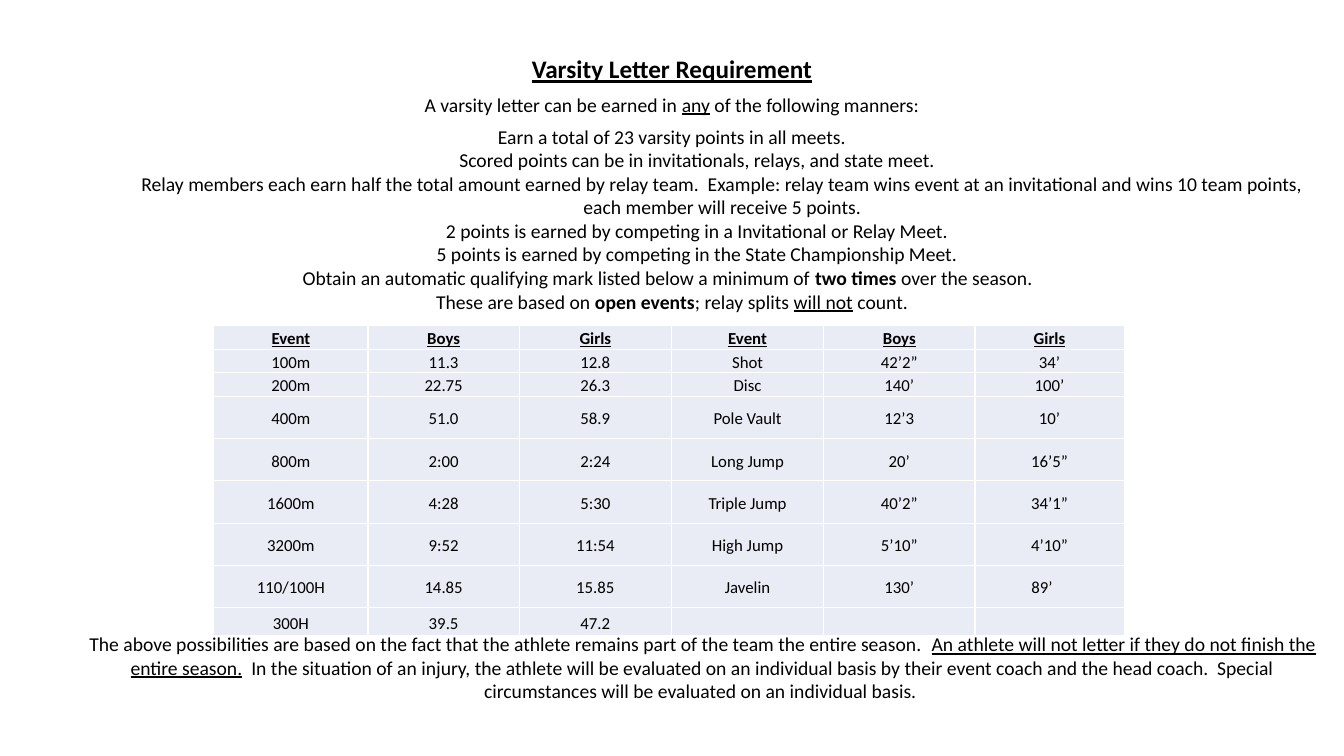
from lxml import etree
from pptx import Presentation
from pptx.dml.color import RGBColor
from pptx.enum.text import MSO_ANCHOR, MSO_AUTO_SIZE, PP_ALIGN
from pptx.oxml.ns import qn
from pptx.util import Pt

PX = 9144  # 100 px to the inch
FONT = "Calibri"
BLACK = RGBColor(0x00, 0x00, 0x00)
WHITE = RGBColor(0xFF, 0xFF, 0xFF)
CELL_FILL = RGBColor(0xE9, 0xEB, 0xF5)
LEFT, CENTER = PP_ALIGN.LEFT, PP_ALIGN.CENTER
TOP, MIDDLE = MSO_ANCHOR.TOP, MSO_ANCHOR.MIDDLE
NO_FIT = MSO_AUTO_SIZE.NONE

# Each paragraph: level, space after, then runs of (text, style)
RULES = [
    (0, 6, [("A varsity letter can be earned in ", ""), ("any", "u"),
            (" of the following manners:", "")]),
    (0, 0, [("Earn a total of 23 varsity points in all meets.", "")]),
    (1, 0, [("Scored points can be in invitationals, relays, and state meet.", "")]),
    (2, 0, [("Relay members each earn half the total amount earned by relay team.  "
             "Example: relay team wins event at an invitational and wins 10 team "
             "points, each member will receive 5 points.", "")]),
    (1, 0, [("2 points is earned by competing in a Invitational or Relay Meet.", "")]),
    (1, 0, [("5 points is earned by competing in the State Championship Meet.", "")]),
    (0, 0, [("Obtain an automatic qualifying mark listed below a minimum of ", ""),
            ("two times", "b"), (" over the season.  ", "")]),
    (0, 0, [("These are based on ", ""), ("open events", "b"),
            ("; relay splits ", ""), ("will not", "u"), (" count.", "")]),
]
MARKS = [
    ["Event", "Boys", "Girls", "Event", "Boys", "Girls"],
    ["100m", "11.3", "12.8", "Shot", "42’2”", "34’"],
    ["200m", "22.75", "26.3", "Disc", "140’", "100’"],
    ["400m", "51.0", "58.9", "Pole Vault", "12’3", "10’"],
    ["800m", "2:00", "2:24", "Long Jump", "20’", "16’5”"],
    ["1600m", "4:28", "5:30", "Triple Jump", "40’2”", "34’1”"],
    ["3200m", "9:52", "11:54", "High Jump", "5’10”", "4’10”"],
    ["110/100H", "14.85", "15.85", "Javelin", "130’", "89’"],
    ["300H", "39.5", "47.2", "", "", ""],
]
COL_WIDTHS = [153, 150, 151, 151, 150, 148]
ROW_HEIGHTS = [22] * 3 + [42] * 5 + [27]
CLOSING = [
    ("The above possibilities are based on the fact that the athlete remains part "
     "of the team the entire season.  ", ""),
    ("An athlete will not letter if they do not finish the entire season.", "u"),
    ("  In the situation of an injury, the athlete will be evaluated on an individual "
     "basis by their event coach and the head coach.  Special circumstances will be "
     "evaluated on an individual basis. ", ""),
]


def write(p, runs, size=14, align=CENTER, before=0, after=0, spacing=1.0, margin=0):
    """Fill a paragraph with runs; style letters are b(old) and u(nderline)."""
    p.alignment, p.line_spacing = align, spacing
    p.space_before, p.space_after = Pt(before), Pt(after)
    pPr = p._p.get_or_add_pPr()
    pPr.set("marL", str(margin * PX))
    pPr.set("indent", "0")
    etree.SubElement(pPr, qn("a:buNone"))
    for text, style in runs:
        r = p.add_run()
        r.text = text
        f = r.font
        f.name, f.size, f.color.rgb = FONT, Pt(size), BLACK
        f.bold, f.underline = "b" in style, "u" in style


def place(sp, x, y, w, h):
    sp.left, sp.top, sp.width, sp.height = (v * PX for v in (x, y, w, h))
    tf = sp.text_frame
    tf.word_wrap, tf.auto_size, tf.vertical_anchor = True, NO_FIT, TOP
    tf.margin_left = tf.margin_right = 10 * PX
    tf.margin_top = tf.margin_bottom = 5 * PX
    return tf


def add_heading(s, x, y, w, h):
    tf = place(s.shapes.title, x, y, w, h)
    write(tf.paragraphs[0], [("Varsity Letter Requirement", "bu")], size=18)


def add_rules(s, x, y, w, h):
    tf = place(s.placeholders[1], x, y, w, h)
    for i, (level, after, runs) in enumerate(RULES):
        p = tf.add_paragraph() if i else tf.paragraphs[0]
        p.level = level
        write(p, runs, after=after, margin=50 * level)


def add_borders(cell):
    tcPr = cell._tc.get_or_add_tcPr()
    for i, side in enumerate(("a:lnL", "a:lnR", "a:lnT", "a:lnB")):
        ln = etree.Element(qn(side), w=str(Pt(1)))
        fill = etree.SubElement(ln, qn("a:solidFill"))
        etree.SubElement(fill, qn("a:srgbClr"), val=str(WHITE))
        tcPr.insert(i, ln)


def add_marks(s, x, y):
    w, h = sum(COL_WIDTHS), sum(ROW_HEIGHTS)
    table = s.shapes.add_table(len(MARKS), len(COL_WIDTHS),
                               x * PX, y * PX, w * PX, h * PX).table
    table.first_row = table.horz_banding = False
    for col, width in zip(table.columns, COL_WIDTHS):
        col.width = width * PX
    for i, (row, height) in enumerate(zip(table.rows, ROW_HEIGHTS)):
        row.height = height * PX
        for cell, text in zip(row.cells, MARKS[i]):
            cell.fill.solid()
            cell.fill.fore_color.rgb = CELL_FILL
            add_borders(cell)
            cell.vertical_anchor = MIDDLE
            cell.margin_left = cell.margin_right = 7 * PX
            cell.margin_top = cell.margin_bottom = 0
            # The javelin mark for girls is indented from the left
            indented = text == "89’"
            write(cell.text_frame.paragraphs[0], [(text, "" if i else "bu")],
                  size=12, before=6, after=6, spacing=1.15,
                  align=LEFT if indented else CENTER, margin=49 if indented else 0)


def add_closing(s, x, y, w, h):
    tf = place(s.shapes.add_textbox(0, 0, PX, PX), x, y, w, h)
    write(tf.paragraphs[0], CLOSING)


def main():
    prs = Presentation()
    prs.slide_width, prs.slide_height = 1333 * PX, 750 * PX
    s = prs.slides.add_slide(prs.slide_layouts[1])
    add_heading(s, 16, 48, 1301, 39)
    add_rules(s, 16, 87, 1301, 230)
    add_marks(s, 212, 323)
    add_closing(s, 76, 622, 1242, 81)
    prs.save("out.pptx")


if __name__ == "__main__":
    main()
